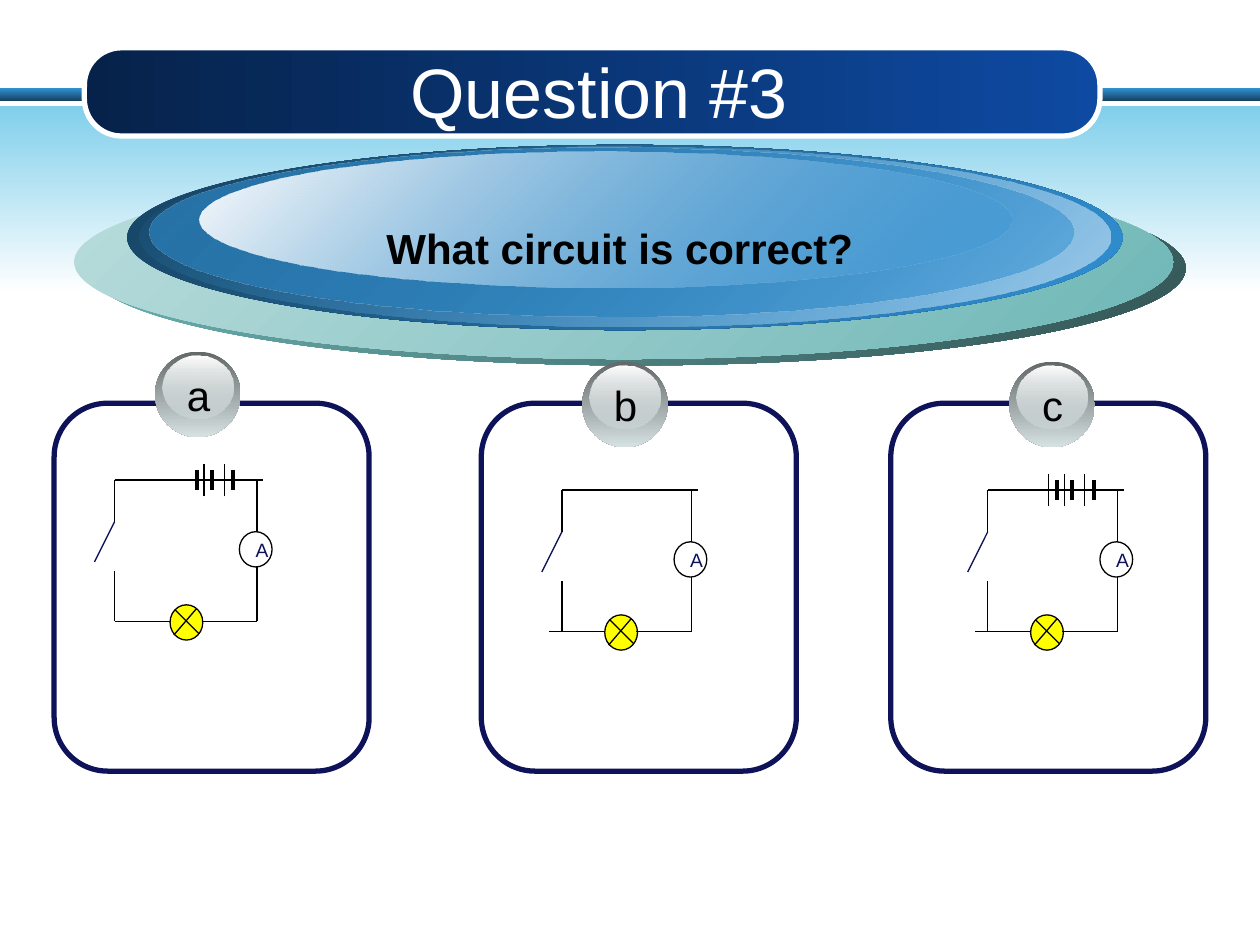
from dataclasses import dataclass

from lxml import etree
from pptx import Presentation
from pptx.dml.color import RGBColor
from pptx.enum.shapes import MSO_CONNECTOR, MSO_SHAPE
from pptx.enum.text import MSO_ANCHOR, MSO_AUTO_SIZE, PP_ALIGN
from pptx.oxml.ns import qn
from pptx.util import Inches, Pt

RECT = MSO_SHAPE.RECTANGLE
ROUNDED = MSO_SHAPE.ROUNDED_RECTANGLE
ELLIPSE = MSO_SHAPE.OVAL
PROCESS = MSO_SHAPE.FLOWCHART_PROCESS
STRAIGHT = MSO_CONNECTOR.STRAIGHT
MIDDLE = MSO_ANCHOR.MIDDLE
FIT = MSO_AUTO_SIZE.SHAPE_TO_FIT_TEXT
FIXED = MSO_AUTO_SIZE.NONE
CENTER = PP_ALIGN.CENTER
LEFT = PP_ALIGN.LEFT

FONT = "Arial"
NAVY, BLACK, WHITE, YELLOW = "0D1259", "000000", "FFFFFF", "FFFF00"
BLUE, TEAL, SILVER = "3191D3", "6FB7B7", "D6E1E2"
THIN, THICK = 0.75, 2.25


@dataclass(frozen=True)
class Box:
    left: float
    top: float
    width: float
    height: float

    def emu(self):
        return [Inches(n) for n in (self.left, self.top, self.width, self.height)]


@dataclass(frozen=True)
class Stop:
    color: str
    alpha: float | None = None
    shade: float | None = None
    tint: float | None = None


@dataclass(frozen=True)
class Gradient:
    start: Stop
    end: Stop
    angle: int


@dataclass(frozen=True)
class Option:
    label: str
    panel_left: float
    badge_left: float
    lamp_left: float
    lamp_top: float
    switch_offset: float
    cells: tuple[tuple[float, float], ...]


CELLS = ((0.14, THIN), (0.21, THICK), (0.27, THIN),
         (0.33, THICK), (0.43, THIN), (0.5, THICK))
OPTIONS = (
    Option("a", 0.43, 1.23, 1.35, 4.8, -0.44, CELLS[1:]),
    Option("b", 3.82, 4.62, 4.8, 4.88, -0.34, ()),
    Option("c", 7.07, 8.01, 8.18, 4.88, -0.34, CELLS),
)

DARK_BLUE = Stop(BLUE, shade=0.46)
BAND = Gradient(Stop(BLUE), DARK_BLUE, 90)
SKY = Gradient(Stop("81CFEB"), Stop(WHITE), 90)
TITLE_BAR = Gradient(Stop("0E4AA2", shade=0.46), Stop("0E4AA2"), 0)
DISCS = (
    (Box(0.69, 1.36, 8.72, 1.54), Gradient(Stop(TEAL), Stop(TEAL, shade=0.46), 45)),
    (Box(0.59, 1.31, 8.72, 1.54), Gradient(Stop(TEAL, tint=0.48), Stop(TEAL), 45)),
    (Box(1.01, 1.15, 7.9, 1.47), Gradient(DARK_BLUE, Stop(BLUE), 45)),
    (Box(1.11, 1.16, 7.7, 1.43),
     Gradient(Stop(BLUE, alpha=0), Stop(BLUE, tint=0.46), 45)),
    (Box(1.19, 1.17, 7.33, 1.34),
     Gradient(Stop(BLUE, shade=0.8), Stop(BLUE, alpha=0.48), 45)),
    (Box(1.58, 1.2, 6.45, 1.08), Gradient(Stop(WHITE), Stop(BLUE, alpha=0.38), 45)),
)
BADGE = Gradient(Stop(SILVER, shade=0.46), Stop(SILVER), 90)
BADGE_GLOSS = Gradient(Stop(WHITE), Stop(SILVER, alpha=0.38), 90)


def rgb(color: str) -> RGBColor:
    return RGBColor.from_string(color)


def add_modifier(node, name: str, value: float | None = None) -> None:
    child = etree.SubElement(node, qn(f"a:{name}"))
    if value is not None:
        child.set("val", str(round(value * 100000)))


def fill_gradient(shape, gradient: Gradient) -> None:
    fill = shape.fill
    fill.gradient()
    fill.gradient_angle = (360 - gradient.angle) % 360
    stops = (gradient.start, gradient.end)
    for target, stop in zip(fill.gradient_stops, stops):
        target.color.rgb = rgb(stop.color)
    for node, stop in zip(shape.element.spPr.iter(qn("a:srgbClr")), stops):
        for name, value in (("shade", stop.shade), ("tint", stop.tint)):
            if value is not None:
                add_modifier(node, "gamma")
                add_modifier(node, name, value)
                add_modifier(node, "invGamma")
        if stop.alpha is not None:
            add_modifier(node, "alpha", stop.alpha)


def add_shape(page, kind, box: Box, fill: str | Gradient | None = None,
              line: str | None = None, width: float = THIN,
              adjustment: float | None = None) -> None:
    shape = page.shapes.add_shape(kind, *box.emu())
    shape.shadow.inherit = False
    if adjustment is not None:
        shape.adjustments[0] = adjustment
    if isinstance(fill, Gradient):
        fill_gradient(shape, fill)
    elif fill:
        shape.fill.solid()
        shape.fill.fore_color.rgb = rgb(fill)
    else:
        shape.fill.background()
    if line:
        shape.line.color.rgb = rgb(line)
        shape.line.width = Pt(width)
    else:
        shape.line.fill.background()


def add_text(page, box: Box, text: str, size: float, color: str,
             bold: bool = False, align=CENTER, wrap: bool = False):
    frame = page.shapes.add_textbox(*box.emu()).text_frame
    frame.word_wrap = wrap
    frame.auto_size = FIT
    para = frame.paragraphs[0]
    para.text = text
    para.alignment = align
    para.font.name = FONT
    para.font.size = Pt(size)
    para.font.bold = bold
    para.font.color.rgb = rgb(color)
    return frame


def add_wire(page, x1: float, y1: float, x2: float, y2: float,
             width: float = THIN, color: str = BLACK) -> None:
    wire = page.shapes.add_connector(
        STRAIGHT, Inches(x1), Inches(y1), Inches(x2), Inches(y2))
    wire.line.color.rgb = rgb(color)
    wire.line.width = Pt(width)
    etree.SubElement(wire.element.spPr, qn("a:effectLst"))


def draw_header(page) -> None:
    add_shape(page, RECT, Box(0, 0.7, 10, 0.1), BAND)
    add_shape(page, RECT, Box(0, 0.84, 10, 1.49), SKY)
    add_shape(page, ROUNDED, Box(0.67, 0.38, 8.06, 0.7), TITLE_BAR, WHITE, 3, 0.42)
    title = add_text(page, Box(0.92, 0.41, 7.67, 0.62), "Question #3", 40, WHITE,
                     wrap=True)
    title.auto_size = FIXED
    title.vertical_anchor = MIDDLE


def draw_badge(page, option: Option) -> None:
    left, top = option.badge_left, option.lamp_top - 2.01
    add_shape(page, ELLIPSE, Box(left, top, 0.68, 0.68), BADGE)
    add_shape(page, ELLIPSE, Box(left + 0.06, top + 0.03, 0.56, 0.5), BADGE_GLOSS)
    add_text(page, Box(left + 0.15, top + 0.09, 0.39, 0.5), option.label, 24, BLACK)


def draw_circuit(page, option: Option) -> None:
    x, y = option.lamp_left, option.lamp_top
    top, bottom = y - 0.99, y + 0.13
    left, right = x + option.switch_offset, x + 0.69
    add_wire(page, left, top, x + 0.74, top)
    for offset, width in option.cells:
        half = 0.13 if width == THIN else 0.08
        add_wire(page, x + offset, top + half, x + offset, top - half, width)
    add_shape(page, ELLIPSE, Box(x, y, 0.26, 0.28), YELLOW, BLACK)
    add_wire(page, x - 0.44, bottom, x, bottom)
    add_wire(page, x + 0.25, bottom, right, bottom)
    add_wire(page, x + 0.03, y + 0.24, x + 0.21, y + 0.03)
    add_wire(page, x + 0.04, y + 0.04, x + 0.23, y + 0.23)
    add_wire(page, right, top, right, bottom)
    add_shape(page, ELLIPSE, Box(x + 0.55, y - 0.58, 0.26, 0.28), WHITE, BLACK)
    add_text(page, Box(x + 0.58, y - 0.58, 0.24, 0.29), "A", 11, NAVY,
             align=LEFT, wrap=True)
    add_wire(page, left, top, left, bottom)
    add_shape(page, PROCESS, Box(left - 0.08, top + 0.33, 0.16, 0.39), WHITE)
    add_wire(page, left, top + 0.33, left - 0.16, top + 0.65, color=NAVY)


def main() -> None:
    deck = Presentation()
    deck.slide_width, deck.slide_height = Inches(10), Inches(7.5)
    page = deck.slides.add_slide(deck.slide_layouts[6])
    draw_header(page)
    for box, gradient in DISCS:
        add_shape(page, ELLIPSE, box, gradient)
    add_text(page, Box(2.95, 1.72, 3.94, 0.5), "What circuit is correct?", 24,
             BLACK, True)
    for option in OPTIONS:
        add_shape(page, ROUNDED, Box(option.panel_left, 3.2, 2.5, 2.92),
                  line=NAVY, width=3, adjustment=0.17)
        draw_badge(page, option)
        draw_circuit(page, option)
    deck.save("out.pptx")


if __name__ == "__main__":
    main()
